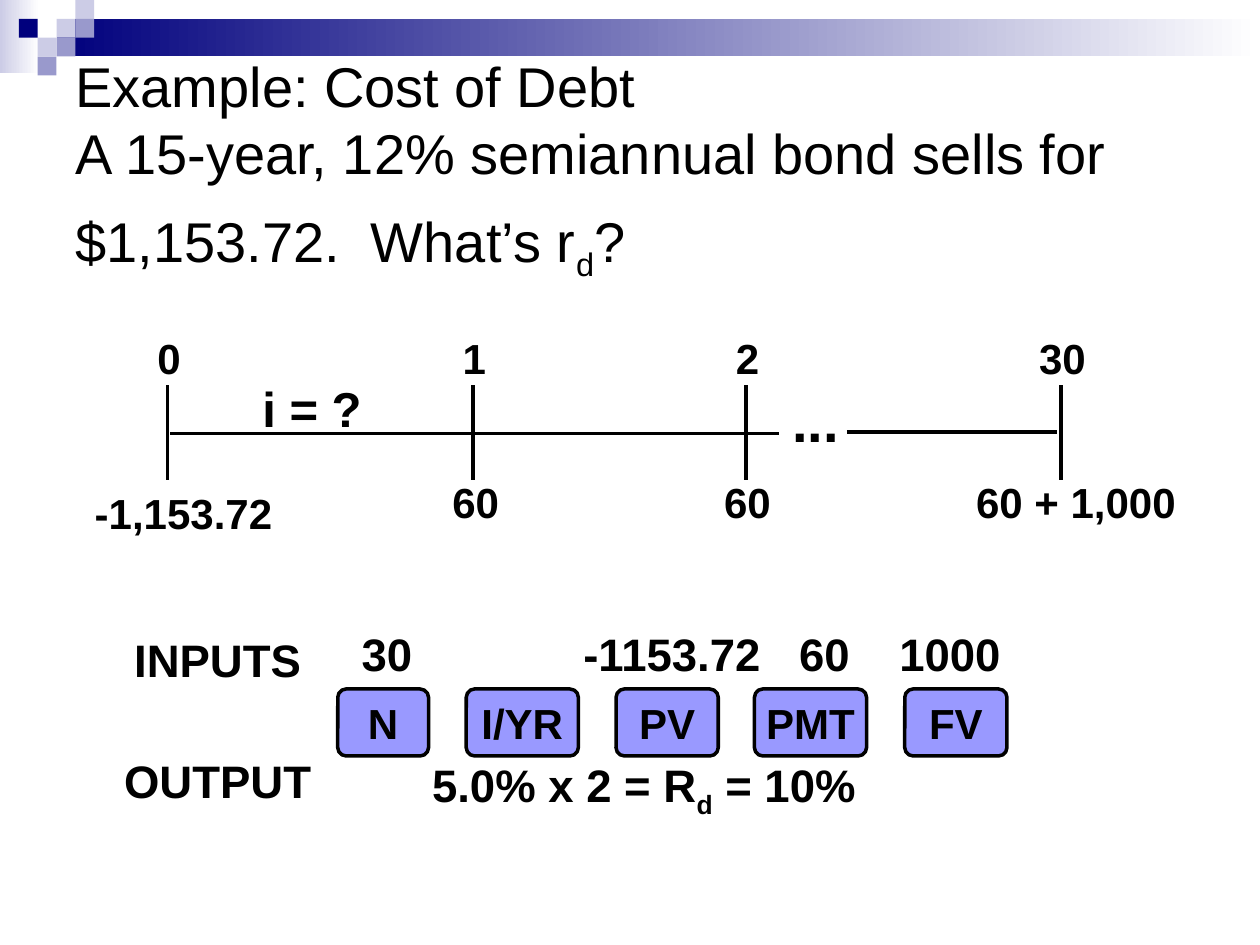
from lxml.etree import SubElement
from pptx import Presentation
from pptx.dml.color import RGBColor
from pptx.enum.shapes import MSO_CONNECTOR, MSO_SHAPE
from pptx.enum.text import MSO_ANCHOR, PP_ALIGN
from pptx.oxml.ns import qn
from pptx.util import Cm, Pt

BLACK = RGBColor(0x00, 0x00, 0x00)
WHITE = RGBColor(0xFF, 0xFF, 0xFF)
NAVY = RGBColor(0x00, 0x00, 0x7D)
PALE = RGBColor(0xCC, 0xCC, 0xE6)
LILAC = RGBColor(0x99, 0x99, 0xCC)
KEY_BLUE = RGBColor(0x99, 0x99, 0xFF)

SQUARE = 0.38
# Column, row and colour of each header square
SQUARES = [(3, 1, PALE), (4, 0, PALE), (4, 1, LILAC), (2, 2, PALE),
           (1, 1, NAVY), (3, 2, LILAC), (2, 3, LILAC)]

# Tick position, period, cash flow, its centre, top and width
PERIODS = [
    (3.38, "0", "-1,153.72", 3.7, 9.7, 4.2),
    (9.53, "1", "60", 9.59, 9.47, 1.5),
    (15.04, "2", "60", 15.07, 9.47, 1.5),
    (21.39, "30", "60 + 1,000", 21.69, 9.47, 4.6),
]

# Calculator keys: label, left, width
KEYS = [("N", 6.81, 1.83), ("I/YR", 9.4, 2.26), ("PV", 12.42, 2.06),
        ("PMT", 15.21, 2.26), ("FV", 18.24, 2.06)]


def style_run(span, size, bold=True, baseline=0):
    span.font.name = "Arial"
    span.font.size = Pt(size)
    span.font.bold = bold
    span.font.color.rgb = BLACK
    if baseline:
        span._r.get_or_add_rPr().set("baseline", str(baseline * 1000))


def add_runs(para, parts, bold=True):
    """Append runs given as (text, size, baseline percent)."""
    for text, size, baseline in parts:
        span = para.add_run()
        span.text = text
        style_run(span, size, bold, baseline)


def set_tabs(para, stops):
    tab_list = SubElement(para._p.get_or_add_pPr(), qn("a:tabLst"))
    for stop in stops:
        SubElement(tab_list, qn("a:tab"), pos=str(Cm(stop)), algn="l")


def add_block(slide, kind, left, top, width, height):
    block = slide.shapes.add_shape(kind, Cm(left), Cm(top), Cm(width), Cm(height))
    block.shadow.inherit = False
    block.line.fill.background()
    return block


def add_gradient(slide, left, top, width, height, start):
    fill = add_block(slide, MSO_SHAPE.RECTANGLE, left, top, width, height).fill
    fill.gradient()
    fill.gradient_angle = 0
    for stop, color, position in zip(fill.gradient_stops, (start, WHITE), (0, 1)):
        stop.color.rgb = color
        stop.position = position


def add_line(slide, x1, y1, x2, y2):
    line = slide.shapes.add_connector(
        MSO_CONNECTOR.STRAIGHT, Cm(x1), Cm(y1), Cm(x2), Cm(y2))
    line.line.color.rgb = BLACK
    line.line.width = Pt(2)
    SubElement(line._element.spPr, qn("a:effectLst"))


def add_box(slide, left, top, width, height):
    box = slide.shapes.add_textbox(Cm(left), Cm(top), Cm(width), Cm(height))
    box.text_frame.word_wrap = True
    return box


def center_text(shape, text, size):
    frame = shape.text_frame
    frame.text = text
    frame.word_wrap = False
    frame.vertical_anchor = MSO_ANCHOR.MIDDLE
    para = frame.paragraphs[0]
    para.alignment = PP_ALIGN.CENTER
    style_run(para.runs[0], size)


def add_label(slide, text, center, top, width, height=1.27, size=24):
    box = add_box(slide, center - width / 2, top, width, height)
    center_text(box, text, size)


def add_header(slide):
    add_gradient(slide, 0, 0, 0.79, 1.47, PALE)
    add_gradient(slide, 1.14, 0.38, 24.26, 0.76, NAVY)
    for column, row, color in SQUARES:
        square = add_block(slide, MSO_SHAPE.RECTANGLE, column * SQUARE,
                           row * SQUARE, SQUARE, SQUARE)
        square.fill.solid()
        square.fill.fore_color.rgb = color


def add_title(slide):
    box = add_box(slide, 1.27, 1.47, 22.86, 3.81)
    box.text_frame.vertical_anchor = MSO_ANCHOR.MIDDLE
    para = box.text_frame.paragraphs[0]
    add_runs(para, [("Example: Cost of Debt ", 32, 0)], bold=False)
    para.add_line_break()
    add_runs(para, [
        ("A 15-year, 12% semiannual bond sells for $1,153.72.  What’s r", 32, 0),
        ("d", 32, -25), ("?", 32, 0), (" ", 44, 0)], bold=False)


def add_timeline(slide):
    for x, period, amount, center, top, width in PERIODS:
        add_line(slide, x, 7.77, x, 9.68)
        add_label(slide, period, x + 0.03, 6.58, 1.5)
        add_label(slide, amount, center, top, width)
    add_line(slide, 3.43, 8.74, 15.7, 8.74)
    add_line(slide, 17.07, 8.71, 21.31, 8.71)
    add_label(slide, "i = ?", 6.29, 7.52, 2.6, 1.42, 28)
    add_label(slide, "...", 16.44, 7.67, 1.5, 1.6, 32)


def add_calculator(slide):
    # Input values and the answer, aligned by tab stops
    frame = add_box(slide, 2.11, 12.27, 20.98, 4.22).text_frame
    inputs, answer = frame.paragraphs[0], frame.add_paragraph()
    inputs.line_spacing = answer.line_spacing = 1.2
    answer.space_before = Pt(37)
    set_tabs(inputs, [4.93, 9.4, 13.75, 15.77])
    set_tabs(answer, [6.35])
    add_runs(inputs, [("\t30\t-1153.72\t60\t1000", 26, 0)])
    add_runs(answer, [("\t5.0% x 2 = R", 26, 0), ("d", 26, -25), (" = 10%", 26, 0)])

    # Keys
    for name, left, width in KEYS:
        key = add_block(slide, MSO_SHAPE.ROUNDED_RECTANGLE, left, 13.89, width, 1.35)
        key.adjustments[0] = 0.125
        key.fill.solid()
        key.fill.fore_color.rgb = KEY_BLUE
        key.line.color.rgb = BLACK
        key.line.width = Pt(2)
        center_text(key, name, 24)

    # Row names
    for name, top in (("INPUTS", 12.5), ("OUTPUT", 14.94)):
        add_label(slide, name, 4.39, top, 4.6, 1.57, 26)


def main():
    deck = Presentation()
    deck.slide_width, deck.slide_height = Cm(25.4), Cm(19.05)
    slide = deck.slides.add_slide(deck.slide_layouts[6])
    add_header(slide)
    add_title(slide)
    add_timeline(slide)
    add_calculator(slide)
    deck.save("out.pptx")


if __name__ == "__main__":
    main()
